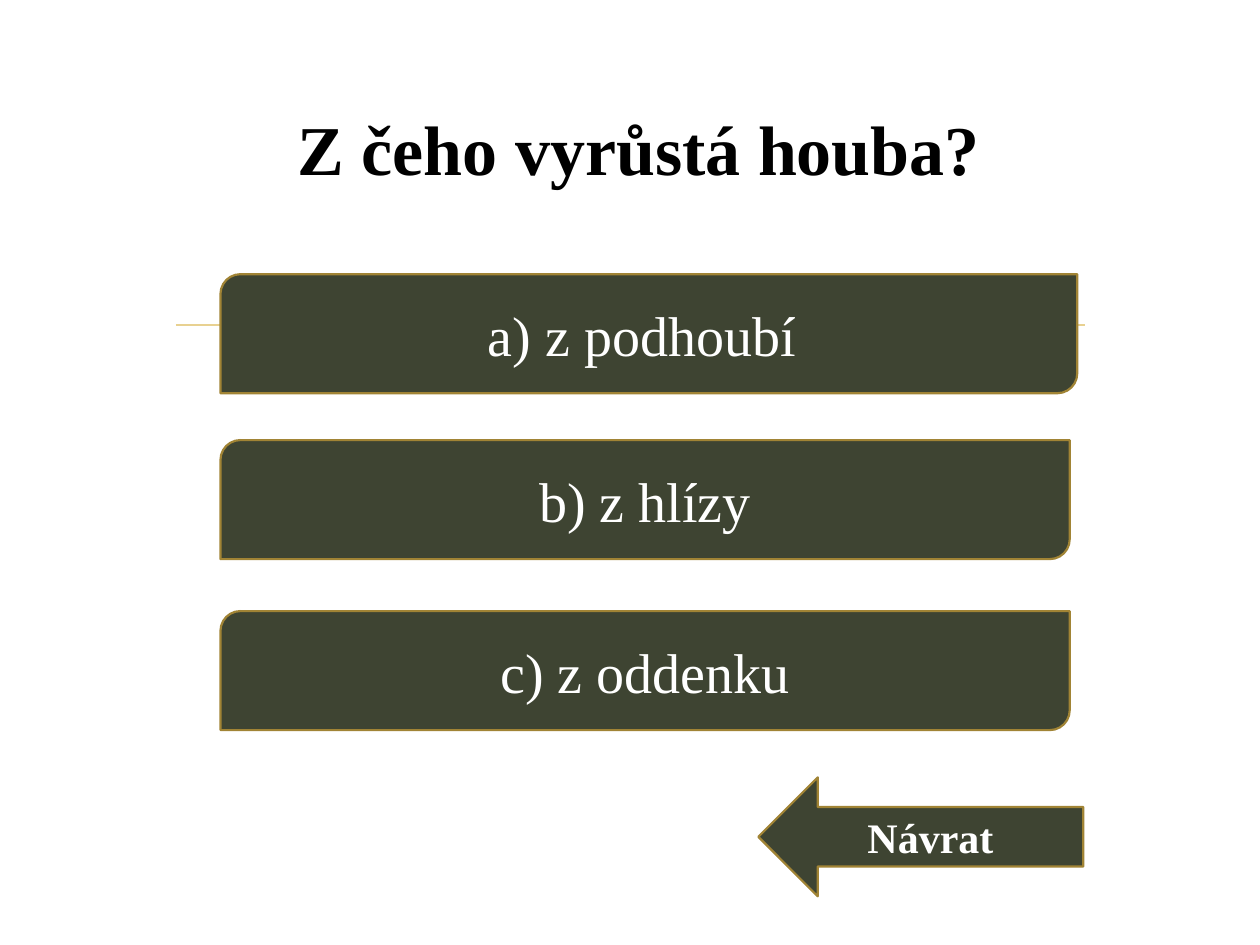
from collections import namedtuple
from dataclasses import dataclass

from pptx import Presentation
from pptx.dml.color import RGBColor
from pptx.enum.shapes import MSO_CONNECTOR, MSO_SHAPE
from pptx.enum.text import MSO_ANCHOR, PP_ALIGN
from pptx.oxml.ns import qn
from pptx.util import Pt

Box = namedtuple("Box", "left top width height")


@dataclass(frozen=True)
class Theme:
    font: str = "Times New Roman"
    ink: RGBColor = RGBColor(0x00, 0x00, 0x00)
    light: RGBColor = RGBColor(0xFF, 0xFF, 0xFF)
    fill: RGBColor = RGBColor(0x3E, 0x44, 0x32)
    outline: RGBColor = RGBColor(0xA1, 0x84, 0x35)
    rule: RGBColor = RGBColor(0xE8, 0xD1, 0x91)
    line_width: float = 1.25
    title_size: int = 40
    answer_size: int = 32
    button_size: int = 24


THEME = Theme()


def write_text(shape, text, size, color, bold=False):
    frame = shape.text_frame
    frame.word_wrap = True
    frame.vertical_anchor = MSO_ANCHOR.MIDDLE
    paragraph = frame.paragraphs[0]
    paragraph.alignment = PP_ALIGN.CENTER
    run = paragraph.add_run()
    run.text = text
    run.font.name = THEME.font
    run.font.size = Pt(size)
    run.font.bold = bold
    run.font.color.rgb = color


def add_panel(slide, kind, box, text, size, bold=False):
    shape = slide.shapes.add_shape(kind, *map(Pt, box))
    shape.shadow.inherit = False
    shape.fill.solid()
    shape.fill.fore_color.rgb = THEME.fill
    shape.line.color.rgb = THEME.outline
    shape.line.width = Pt(THEME.line_width)
    write_text(shape, text, size, THEME.light, bold)


def place_title(slide, box, text):
    title = slide.shapes.title
    title.left, title.top, title.width, title.height = map(Pt, box)
    write_text(title, text, THEME.title_size, THEME.ink, bold=True)


def add_rule(slide, box):
    rule = slide.shapes.add_connector(
        MSO_CONNECTOR.STRAIGHT, Pt(box.left), Pt(box.top),
        Pt(box.left + box.width), Pt(box.top + box.height))
    rule.line.color.rgb = THEME.rule
    rule.line.width = Pt(THEME.line_width)
    properties = rule._element.spPr
    properties.append(properties.makeelement(qn("a:effectLst"), {}))


def add_answers(slide, box, answers):
    # Each answer has its own offset from the top and its own width
    for text, offset, width, height in answers:
        answer_box = Box(box.left, box.top + offset, width, height)
        add_panel(slide, MSO_SHAPE.ROUND_2_DIAG_RECTANGLE, answer_box,
                  text, THEME.answer_size)


def add_return_button(slide, box):
    add_panel(slide, MSO_SHAPE.LEFT_ARROW, box, "Návrat ",
              THEME.button_size, bold=True)


def main():
    presentation = Presentation()
    presentation.slide_width = Pt(720)
    presentation.slide_height = Pt(540)
    slide = presentation.slides.add_slide(presentation.slide_layouts[5])

    # Question and the rule below it
    place_title(slide, Box(75, 39.5, 590, 90), "Z čeho vyrůstá houba? ")
    add_rule(slide, Box(100.5, 185.5, 519.5, 0))

    # Answers
    add_answers(slide, Box(126, 156.7, 489.6, 260.5), [
        ("a) z podhoubí ", 0, 489.6, 68),
        ("b) z hlízy", 94.8, 485.3, 68),
        ("c) z oddenku", 192.5, 485.3, 68),
    ])

    # Way back
    add_return_button(slide, Box(433.3, 444.2, 185.7, 68))
    presentation.save("out.pptx")


if __name__ == "__main__":
    main()
